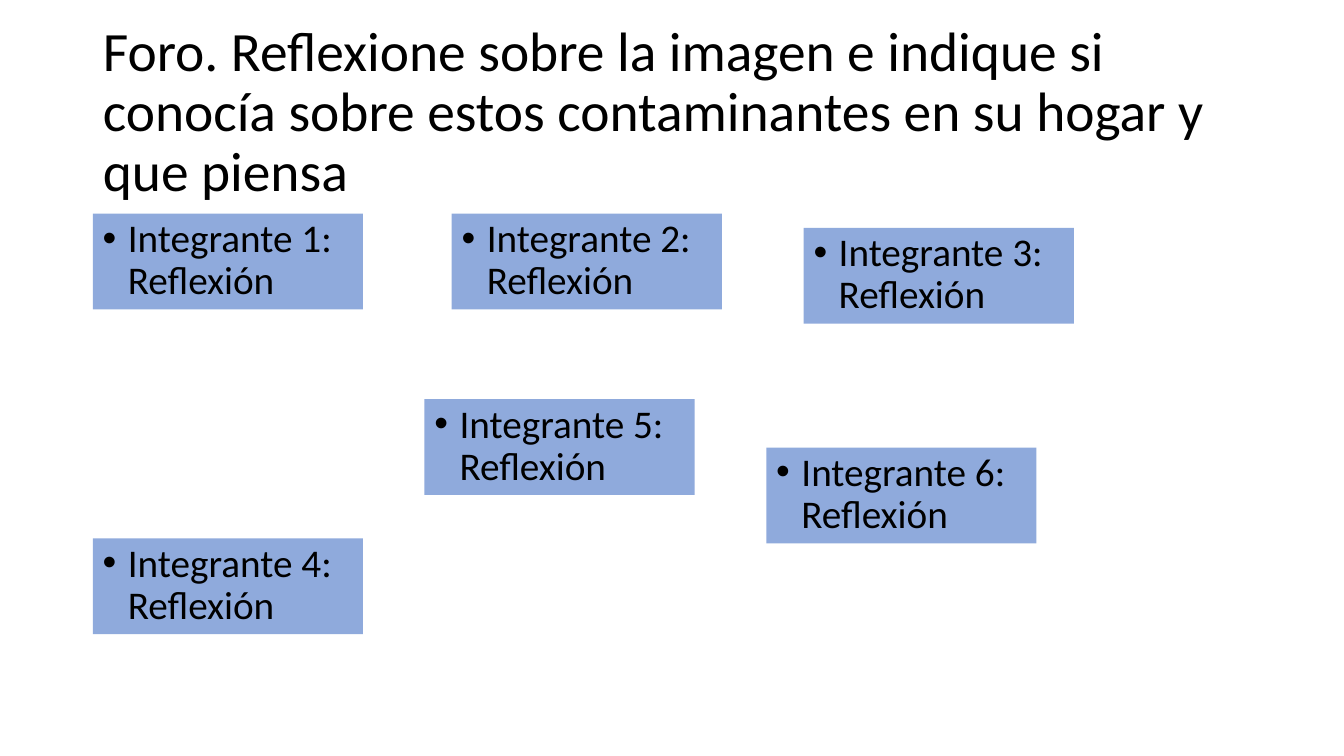
from lxml import etree
from pptx import Presentation
from pptx import util as u
from pptx.dml.color import RGBColor
from pptx.enum import text
from pptx.oxml.ns import qn

PX = 9144


def px(value):
    return u.Emu(value * PX)


def paint(color, value):
    color.rgb = RGBColor.from_string(value)


def write(frame, words, size, font="Calibri", color="000000",
          anchor=text.MSO_ANCHOR.TOP, fit=text.MSO_AUTO_SIZE.NONE, before=0, bullet=None):
    frame.word_wrap = True
    frame.auto_size = fit
    frame.vertical_anchor = anchor
    para = frame.paragraphs[0]
    para.alignment = text.PP_ALIGN.LEFT
    para.line_spacing = 0.9
    para.space_before = u.Pt(before)
    if bullet:
        properties = para._p.get_or_add_pPr()
        properties.set("marL", str(px(25)))
        properties.set("indent", str(px(-25)))
        etree.SubElement(properties, qn("a:buFont")).set("typeface", "Arial")
        etree.SubElement(properties, qn("a:buChar")).set("char", bullet)
    span = para.add_run()
    span.text = words
    span.font.name = font
    span.font.size = u.Pt(size)
    paint(span.font.color, color)


class Board:
    """Holds the deck, its current page and the style of the forum cards."""

    card_fill = "8FAADC"
    card_size = (268, 95)

    def __init__(self, width, height):
        self.deck = Presentation()
        self.deck.slide_width = px(width)
        self.deck.slide_height = px(height)
        self.page = self.deck.slides.add_slide(self.deck.slide_layouts[5])

    def title(self, words, left, top, width, height):
        box = self.page.shapes.title
        box.left, box.top, box.width, box.height = map(px, (left, top, width, height))
        write(box.text_frame, words, 39.6, anchor=text.MSO_ANCHOR.MIDDLE)

    def card(self, words, left, top):
        box = self.page.shapes.add_textbox(*map(px, (left, top, *self.card_size)))
        box.fill.solid()
        paint(box.fill.fore_color, self.card_fill)
        write(box.text_frame, words, 28, before=10, bullet="•",
              fit=text.MSO_AUTO_SIZE.SHAPE_TO_FIT_TEXT)


def main():
    board = Board(1333, 750)
    board.title("Foro. Reflexione sobre la imagen e indique si conocía sobre estos "
                "contaminantes en su hogar y que piensa", 92, 40, 1150, 145)
    places = [(92, 212), (448, 212), (797, 226), (92, 534), (421, 396), (760, 444)]
    for number, (left, top) in enumerate(places, 1):
        board.card(f"Integrante {number}: Reflexión", left, top)
    board.deck.save("out.pptx")


if __name__ == "__main__":
    main()
